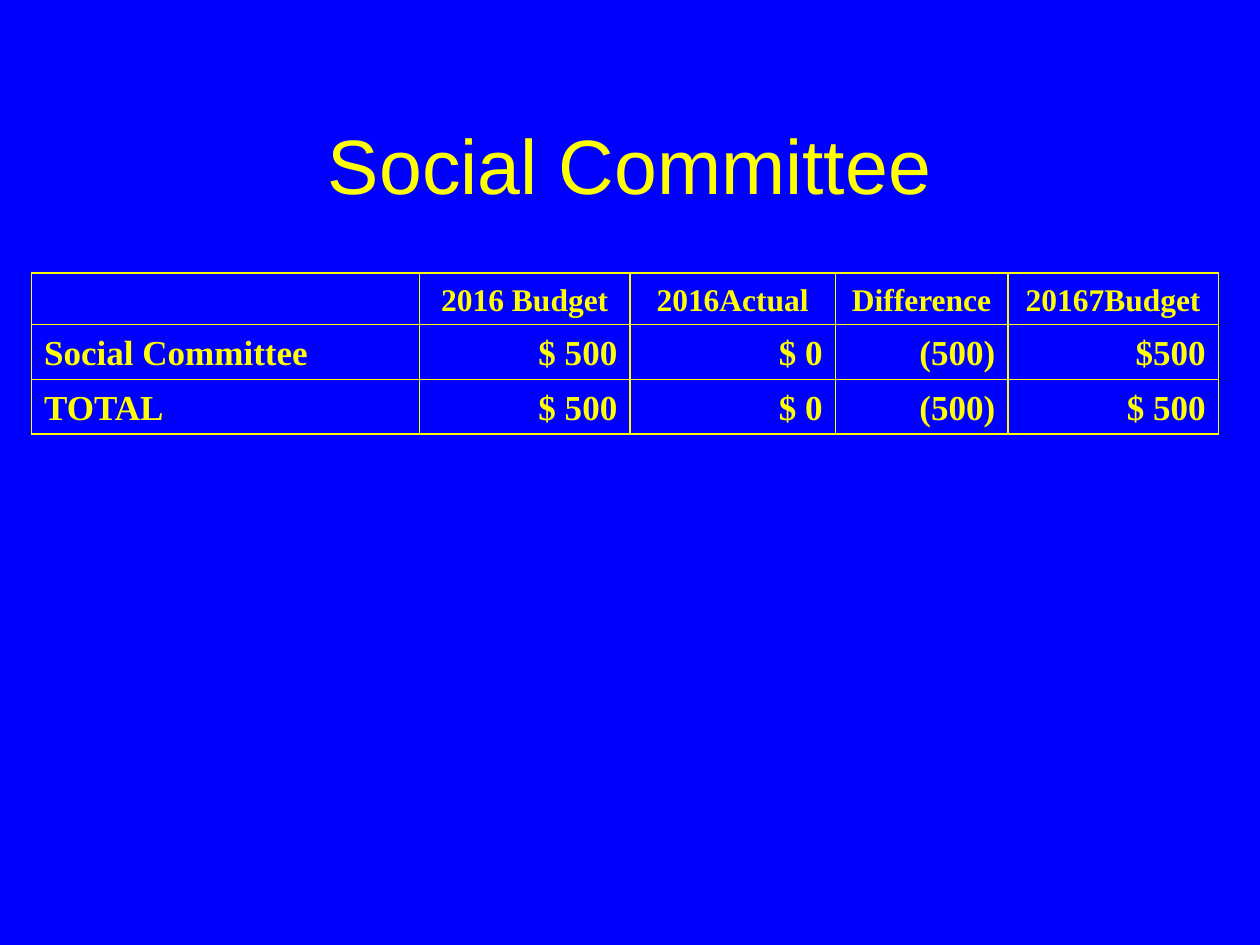
from dataclasses import dataclass

from lxml import etree
from pptx import Presentation
from pptx import util as u
from pptx.dml.color import RGBColor
from pptx.enum import text
from pptx.oxml import ns


@dataclass(frozen=True)
class Theme:
    background: str = "0000FF"
    ink: str = "FFFF00"
    title_font: str = "Arial"
    table_font: str = "Times New Roman"
    title_size: int = 44
    header_size: int = 18
    body_size: int = 20
    border_width: int = 1


THEME = Theme()
WIDTH, HEIGHT = u.Inches(10), u.Inches(7.5)
COLUMN_WIDTHS = (3.08, 1.67, 1.63, 1.37, 1.67)
ROW_HEIGHT = 0.41
ROWS = (
    ("", "2016 Budget", "2016Actual", "Difference", "20167Budget"),
    ("Social Committee", "$ 500", "$ 0", "(500)", "$500"),
    ("TOTAL", "$ 500", "$ 0", "(500)", "$ 500"),
)


def format_text(paragraph, font_name, size, alignment, bold=False):
    paragraph.alignment = alignment
    for run in paragraph.runs:
        run.font.name = font_name
        run.font.size = u.Pt(size)
        run.font.bold = bold
        run.font.color.rgb = RGBColor.from_string(THEME.ink)


def add_title(slide, title):
    shape = slide.shapes.add_textbox(
        int(WIDTH * 0.075), int(HEIGHT * 0.09), int(WIDTH * 0.85), int(HEIGHT / 6))
    frame = shape.text_frame
    frame.word_wrap = True
    frame.vertical_anchor = text.MSO_ANCHOR.MIDDLE
    frame.text = title
    format_text(frame.paragraphs[0], THEME.title_font, THEME.title_size,
                text.PP_ALIGN.CENTER)


def draw_borders(cell):
    properties = cell._tc.get_or_add_tcPr()
    # Border lines come before the fill in the cell properties
    for position, side in enumerate(("lnL", "lnR", "lnT", "lnB")):
        line = etree.Element(ns.qn(f"a:{side}"), w=str(u.Pt(THEME.border_width)))
        fill = etree.SubElement(line, ns.qn("a:solidFill"))
        etree.SubElement(fill, ns.qn("a:srgbClr"), val=THEME.ink)
        properties.insert(position, line)


def fill_cell(cell, content, is_header, is_label):
    cell.fill.background()
    cell.vertical_anchor = text.MSO_ANCHOR.BOTTOM
    cell.text_frame.text = content
    if is_header:
        size, alignment = THEME.header_size, text.PP_ALIGN.CENTER
    else:
        size = THEME.body_size
        alignment = text.PP_ALIGN.LEFT if is_label else text.PP_ALIGN.RIGHT
    format_text(cell.text_frame.paragraphs[0], THEME.table_font, size, alignment, bold=True)
    draw_borders(cell)


def add_budget_table(slide):
    table = slide.shapes.add_table(
        len(ROWS), len(COLUMN_WIDTHS), int(WIDTH * 0.025), int(HEIGHT * 0.289),
        u.Inches(sum(COLUMN_WIDTHS)), u.Inches(ROW_HEIGHT * len(ROWS))).table
    table.first_row = table.horz_banding = False
    for column, width in zip(table.columns, COLUMN_WIDTHS):
        column.width = u.Inches(width)
    for row_index, row in enumerate(ROWS):
        table.rows[row_index].height = u.Inches(ROW_HEIGHT)
        for column_index, content in enumerate(row):
            fill_cell(table.cell(row_index, column_index), content,
                      is_header=row_index == 0, is_label=column_index == 0)


def main():
    presentation = Presentation()
    presentation.slide_width, presentation.slide_height = WIDTH, HEIGHT
    slide = presentation.slides.add_slide(presentation.slide_layouts[6])

    # Background
    slide.background.fill.solid()
    slide.background.fill.fore_color.rgb = RGBColor.from_string(THEME.background)

    # Heading and budget figures
    add_title(slide, "Social Committee")
    add_budget_table(slide)
    presentation.save("out.pptx")


if __name__ == "__main__":
    main()
